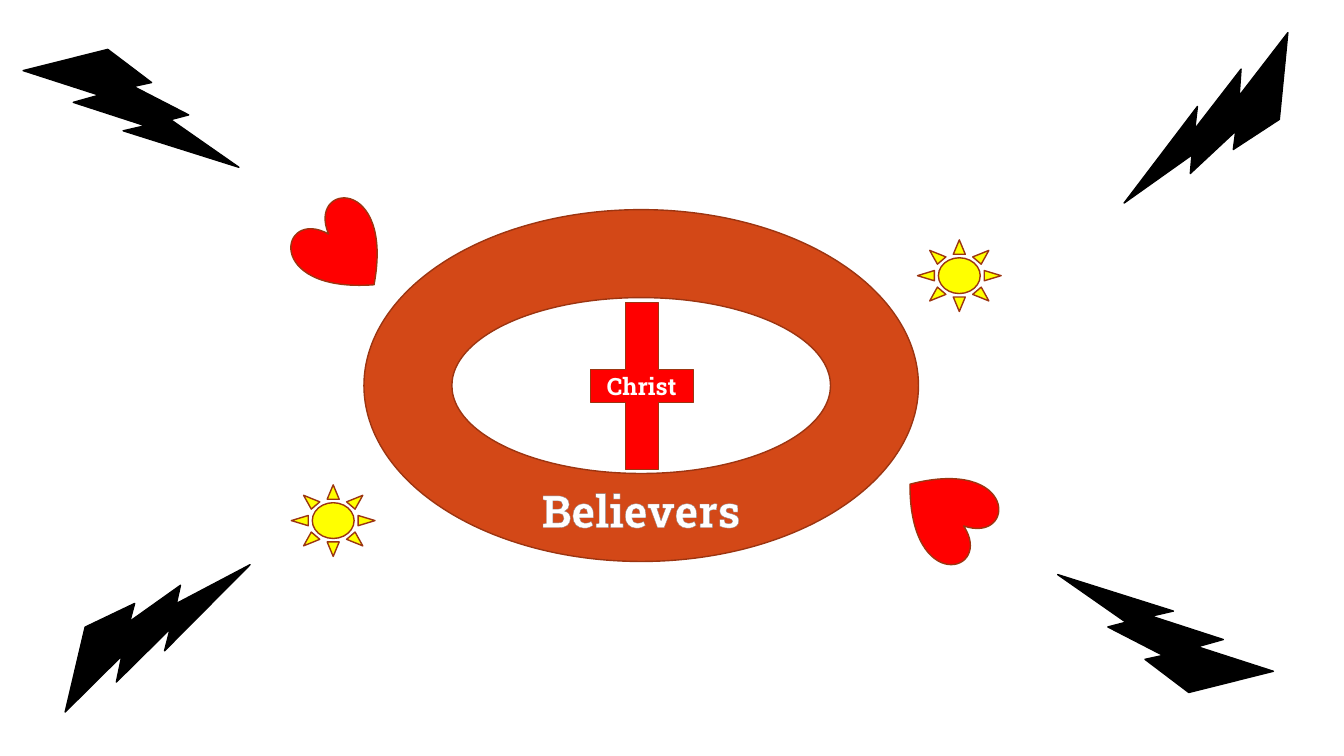
from dataclasses import dataclass

from lxml import etree
from pptx import Presentation
from pptx.dml.color import RGBColor
from pptx.enum.shapes import MSO_SHAPE as Shape
from pptx.enum.text import MSO_ANCHOR as Anchor, PP_ALIGN as Align
from pptx.oxml.ns import qn
from pptx.util import Emu, Pt

EMU_PER_PX = 9144
FONT = "Roboto Slab"
COLORS = {
    "white": "FFFFFF", "black": "000000", "red": "FF0000", "yellow": "FFFF00",
    "orange": "D34817", "rust": "9C3511", "gray": "918485",
}


@dataclass(frozen=True)
class Kind:
    preset: Shape
    width: int
    height: int
    fill: str
    line: str = "rust"


@dataclass(frozen=True)
class Item:
    kind: Kind
    left: int
    top: int
    rotation: float = 0


CROSS = Kind(Shape.MATH_PLUS, 139, 226, "red")
RING = Kind(Shape.DONUT, 550, 349, "orange")
BOLT = Kind(Shape.LIGHTNING_BOLT, 214, 117, "black", "black")
SUN = Kind(Shape.SUN, 83, 71, "yellow")
HEART = Kind(Shape.HEART, 86, 90, "red")

SURROUNDINGS = [
    Item(BOLT, 23, 49),
    Item(BOLT, 1049, 570, 180),
    Item(BOLT, 1099, 62, 109.7),
    Item(BOLT, 40, 570, 297.3),
    Item(SUN, 910, 238),
    Item(HEART, 298, 204, 318.1),
    Item(HEART, 895, 463, 127.9),
    Item(SUN, 289, 481),
]


def px(n: int) -> Emu:
    return Emu(n * EMU_PER_PX)


def rgb(name: str) -> RGBColor:
    return RGBColor.from_string(COLORS[name])


def draw(slide, item: Item):
    kind = item.kind
    sp = slide.shapes.add_shape(
        kind.preset, px(item.left), px(item.top), px(kind.width), px(kind.height))
    sp.rotation = item.rotation
    sp.shadow.inherit = False
    sp.fill.solid()
    sp.fill.fore_color.rgb = rgb(kind.fill)
    sp.line.color.rgb = rgb(kind.line)
    sp.line.width = Pt(1)
    return sp


def write(sp, text: str, *, size: int, anchor: Anchor = Anchor.MIDDLE,
          inset_top: int = 5, outline: str = "") -> None:
    tf = sp.text_frame
    tf.word_wrap = True
    tf.vertical_anchor = anchor
    tf.margin_top = px(inset_top)
    p = tf.paragraphs[0]
    p.alignment = Align.CENTER
    r = p.add_run()
    r.text = text
    r.font.name = FONT
    r.font.size = Pt(size)
    r.font.bold = True
    r.font.color.rgb = rgb("white")
    if outline:
        ln = etree.Element(qn("a:ln"), w=str(Pt(0.8)))
        fill = etree.SubElement(ln, qn("a:solidFill"))
        etree.SubElement(fill, qn("a:srgbClr"), val=COLORS[outline])
        r.font._element.insert(0, ln)


def main() -> None:
    prs = Presentation()
    prs.slide_width, prs.slide_height = px(1333), px(750)
    slide = prs.slides.add_slide(prs.slide_layouts[6])

    cross = draw(slide, Item(CROSS, 567, 270))
    write(cross, "Christ", size=17)
    ring = draw(slide, Item(RING, 361, 208))
    write(ring, "Believers", size=32, anchor=Anchor.TOP, inset_top=220, outline="gray")
    for item in SURROUNDINGS:
        draw(slide, item)

    prs.save("out.pptx")


if __name__ == "__main__":
    main()
